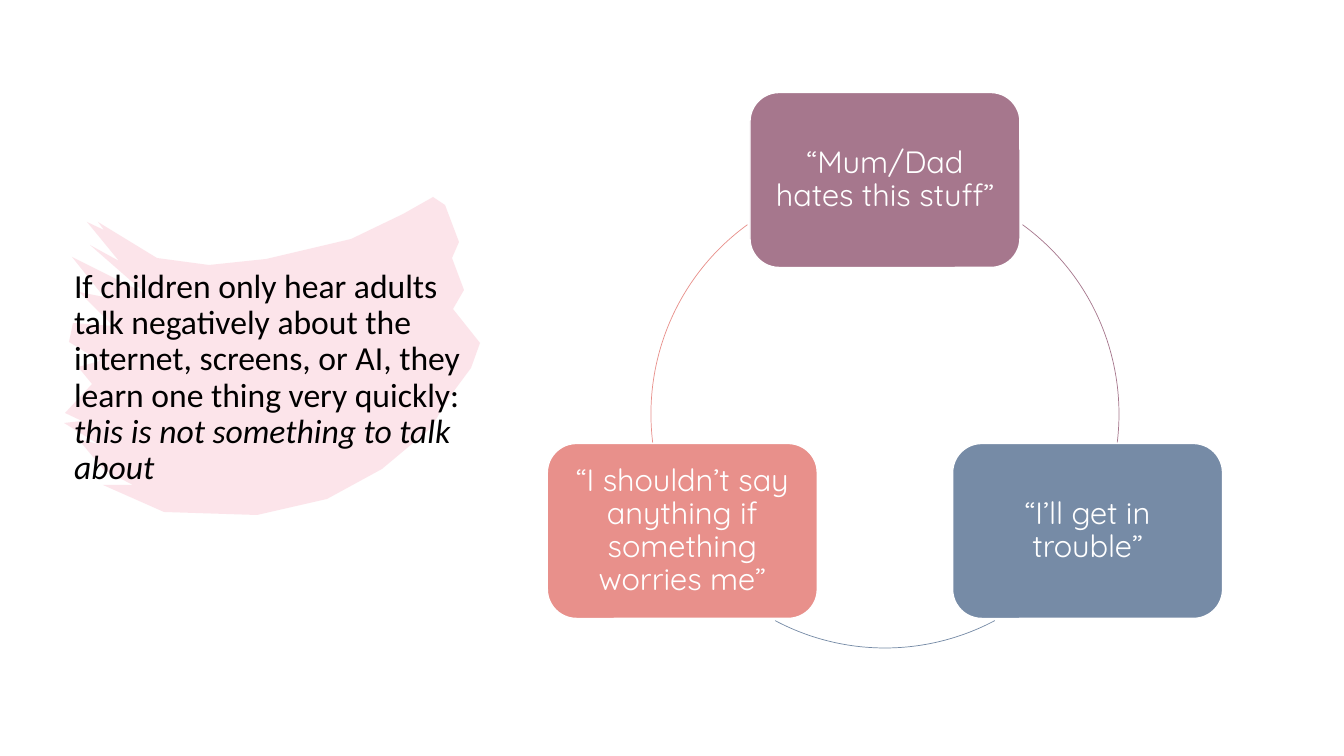
"""Build a slide on how negative talk keeps children from speaking up."""
from math import cos, radians, sin

from lxml.etree import SubElement
from pptx import Presentation
from pptx.dml.color import RGBColor
from pptx.enum.shapes import MSO_SHAPE
from pptx.enum.text import MSO_ANCHOR, MSO_AUTO_SIZE, PP_ALIGN
from pptx.oxml.ns import qn
from pptx.util import Pt

EMU_PER_PX = 914400 / 100.8
BLACK = RGBColor(0x00, 0x00, 0x00)
WHITE = RGBColor(0xFF, 0xFF, 0xFF)
PINK = RGBColor(0xF0, 0x7C, 0x98)
MAUVE = RGBColor(0xA6, 0x77, 0x8D)
SLATE = RGBColor(0x76, 0x8B, 0xA6)
CORAL = RGBColor(0xE8, 0x90, 0x8B)

CYCLE_X, CYCLE_Y, CYCLE_RADIUS = 885, 414, 234
CARD_WIDTH, CARD_HEIGHT = 270, 175
THOUGHTS = [
    ("“Mum/Dad hates this stuff”", MAUVE, -90, (306, 7)),
    ("“I’ll get in trouble”", SLATE, 30, (62, 118)),
    ("“I shouldn’t say anything if something worries me”", CORAL, 150, (173, 234)),
]
BRUSH_STROKE = [
    (433, 197), (445, 205), (459, 242), (452, 258), (464, 290), (453, 309),
    (480, 343), (471, 368), (448, 399), (431, 428), (382, 469), (327, 499),
    (257, 515), (164, 512), (103, 485), (133, 485), (104, 470), (78, 439),
    (98, 444), (64, 423), (82, 421), (65, 413), (92, 384), (78, 367),
    (100, 361), (69, 342), (73, 323), (113, 326), (79, 292), (104, 297),
    (72, 257), (146, 294), (90, 245), (119, 261), (87, 222), (104, 230),
    (98, 222), (157, 258), (209, 265), (266, 259), (351, 239), (403, 214),
]


def px(length):
    return round(length * EMU_PER_PX)


def write(frame, text, font, size, color, align=PP_ALIGN.LEFT, italic_tail="", inset=10):
    frame.word_wrap = True
    frame.auto_size = MSO_AUTO_SIZE.NONE
    frame.vertical_anchor = MSO_ANCHOR.MIDDLE
    frame.margin_left = frame.margin_right = px(inset)
    frame.margin_top = frame.margin_bottom = px(inset // 2)
    paragraph = frame.paragraphs[0]
    paragraph.alignment = align
    paragraph.line_spacing = 0.9
    for words, italic in ((text, False), (italic_tail, True)):
        if words:
            run = paragraph.add_run()
            run.text = words
            run.font.name = font
            run.font.size = Pt(size)
            run.font.color.rgb = color
            run.font.italic = italic


class CycleSlide:
    def __init__(self, deck):
        self.slide = deck.slides.add_slide(deck.slide_layouts[5])
        self.shapes = self.slide.shapes

    def title(self, left, top, width, height, text, italic_tail):
        title = self.shapes.title
        title.left, title.top = px(left), px(top)
        title.width, title.height = px(width), px(height)
        write(title.text_frame, text, "Calibri", 24, BLACK, italic_tail=italic_tail)

    def brush(self, points, color, opacity):
        builder = self.shapes.build_freeform(*points[0], scale=EMU_PER_PX)
        builder.add_line_segments(points[1:], close=True)
        stroke = builder.convert_to_shape()
        stroke.shadow.inherit = False
        stroke.line.fill.background()
        stroke.fill.solid()
        stroke.fill.fore_color.rgb = color
        tint = stroke._element.spPr.find(f".//{qn('a:srgbClr')}")
        SubElement(tint, qn("a:alpha"), val=str(opacity * 1000))
        self.shapes._spTree.insert(2, stroke._element)

    def card(self, center_x, center_y, text, color):
        card = self.shapes.add_shape(
            MSO_SHAPE.ROUNDED_RECTANGLE,
            px(center_x - CARD_WIDTH / 2), px(center_y - CARD_HEIGHT / 2),
            px(CARD_WIDTH), px(CARD_HEIGHT))
        card.shadow.inherit = False
        card.fill.solid()
        card.fill.fore_color.rgb = color
        card.line.color.rgb = WHITE
        card.line.width = Pt(1)
        write(card.text_frame, text, "Quicksand", 22, WHITE,
              align=PP_ALIGN.CENTER, inset=9)

    def arc(self, angles, color):
        arc = self.shapes.add_shape(
            MSO_SHAPE.ARC,
            px(CYCLE_X - CYCLE_RADIUS), px(CYCLE_Y - CYCLE_RADIUS),
            px(2 * CYCLE_RADIUS), px(2 * CYCLE_RADIUS))
        for index, degrees in enumerate(angles):
            arc.adjustments[index] = degrees * 0.6
        arc.shadow.inherit = False
        arc.fill.background()
        arc.line.color.rgb = color
        arc.line.width = Pt(0.5)


def main():
    deck = Presentation()
    deck.slide_width, deck.slide_height = px(1344), px(756)
    page = CycleSlide(deck)
    page.brush(BRUSH_STROKE, PINK, 20)
    page.title(64, 206, 417, 344,
               "If children only hear adults talk negatively about the internet, "
               "screens, or AI, they learn one thing very quickly: ",
               "this is not something to talk about")
    for text, color, angle, arc_angles in THOUGHTS:
        page.card(CYCLE_X + CYCLE_RADIUS * cos(radians(angle)),
                  CYCLE_Y + CYCLE_RADIUS * sin(radians(angle)), text, color)
        page.arc(arc_angles, color)
    deck.save("out.pptx")


if __name__ == "__main__":
    main()
